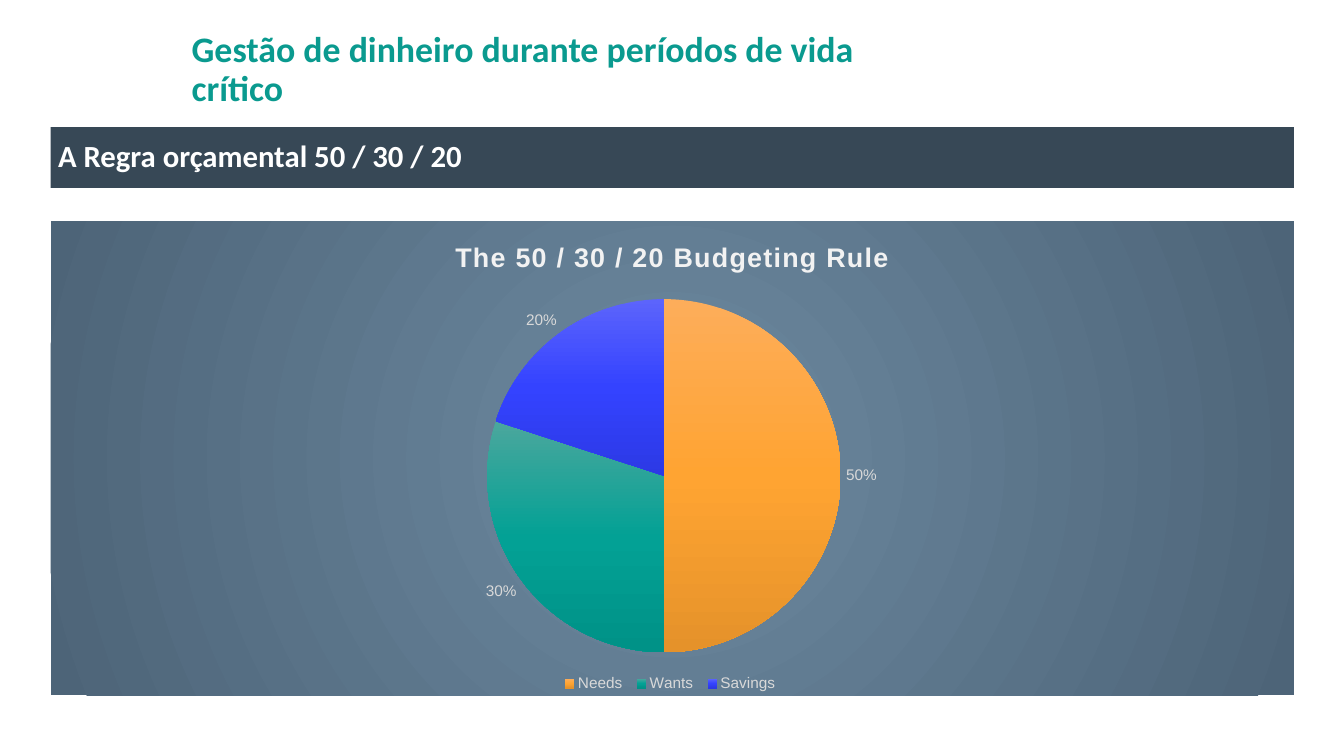
"""Build a slide about the 50 / 30 / 20 budgeting rule."""
import pptx
import pptx.chart.data
import pptx.dml.color
import pptx.enum.chart
import pptx.enum.shapes
import pptx.enum.text
import pptx.oxml
import pptx.oxml.ns
import pptx.util

Inches = pptx.util.Inches
SLICES = [
    ("Needs ", 50, ["FDAD5A", "FFA432", "E5922A"]),
    ("Wants ", 30, ["4BA79D", "03A195", "009287"]),
    ("Savings ", 20, ["5C64FC", "3443FF", "2C39E5"]),
]
LINEAR = '<a:lin ang="5400000" scaled="0"/>'
RADIAL = '<a:path path="circle"><a:fillToRect l="50000" t="50000" r="50000" b="50000"/></a:path>'


def color(value):
    return pptx.dml.color.RGBColor.from_string(value)


def format_font(font, size, fill, name, bold=False):
    font.size = pptx.util.Pt(size)
    font.name = name
    font.bold = bold
    font.color.rgb = color(fill)


def write_text(frame, text, align=None, spacing=1.0, **style):
    para = frame.paragraphs[0]
    para.alignment = align
    para.line_spacing = spacing
    span = para.add_run()
    span.text = text
    format_font(span.font, **style)
    return span


def gradient(colors, direction):
    step = 100000 // (len(colors) - 1)
    stops = "".join(
        f'<a:gs pos="{index * step}"><a:srgbClr val="{value}"/></a:gs>'
        for index, value in enumerate(colors)
    )
    return pptx.oxml.parse_xml(
        f'<a:gradFill {pptx.oxml.ns.nsdecls("a")} rotWithShape="1">'
        f"<a:gsLst>{stops}</a:gsLst>{direction}</a:gradFill>"
    )


class SlideBuilder:
    heading_font = "Calibri"
    chart_font = "Arial"
    teal, slate, white, pale, gray = "0A9A8F", "374856", "FFFFFF", "F2F2F2", "D9D9D9"

    def __init__(self, deck):
        self.page = deck.slides.add_slide(deck.slide_layouts[5])
        self.page.background.fill.solid()
        self.page.background.fill.fore_color.rgb = color(self.white)

    def set_frame(self, frame):
        frame.word_wrap = True
        frame.auto_size = pptx.enum.text.MSO_AUTO_SIZE.NONE
        frame.vertical_anchor = pptx.enum.text.MSO_ANCHOR.MIDDLE
        frame.margin_left = frame.margin_right = Inches(0.08)
        frame.margin_top = frame.margin_bottom = Inches(0.05)

    def title(self, text, left, top, width, height):
        box = self.page.shapes.title
        box.left, box.top = Inches(left), Inches(top)
        box.width, box.height = Inches(width), Inches(height)
        self.set_frame(box.text_frame)
        write_text(box.text_frame, text, pptx.enum.text.PP_ALIGN.LEFT, 0.9,
                   size=28, fill=self.teal, name=self.heading_font, bold=True)

    def banner(self, text, left, top, width, height):
        box = self.page.shapes.add_shape(
            pptx.enum.shapes.MSO_SHAPE.RECTANGLE,
            Inches(left), Inches(top), Inches(width), Inches(height))
        box.shadow.inherit = False
        box.fill.solid()
        box.fill.fore_color.rgb = color(self.slate)
        box.line.fill.background()
        self.set_frame(box.text_frame)
        write_text(box.text_frame, text, pptx.enum.text.PP_ALIGN.JUSTIFY, 0.9,
                   size=24, fill=self.white, name=self.heading_font, bold=True)

    def pie(self, heading, slices, left, top, width, height):
        data = pptx.chart.data.CategoryChartData()
        data.categories = [name for name, share, colors in slices]
        data.add_series("Series 1", [share for name, share, colors in slices])
        chart = self.page.shapes.add_chart(
            pptx.enum.chart.XL_CHART_TYPE.PIE,
            Inches(left), Inches(top), Inches(width), Inches(height), data).chart
        format_font(chart.font, 10, self.slate, self.chart_font)
        self.chart_background(chart, ["6D8AA1", "4D6478"])

        chart.has_title = True
        span = write_text(chart.chart_title.text_frame, heading, size=21,
                          fill=self.pale, name=self.chart_font, bold=True)
        span.font._element.set("spc", "100")
        chart.chart_title.include_in_layout = False

        chart.has_legend = True
        chart.legend.position = pptx.enum.chart.XL_LEGEND_POSITION.BOTTOM
        chart.legend.include_in_layout = False
        format_font(chart.legend.font, 12, self.gray, self.chart_font)

        plot = chart.plots[0]
        plot.vary_by_categories = True
        plot.has_data_labels = True
        labels = plot.data_labels
        labels.show_percentage = True
        labels.show_value = False
        labels.number_format = "0%"
        labels.number_format_is_linked = False
        labels.position = pptx.enum.chart.XL_LABEL_POSITION.OUTSIDE_END
        format_font(labels.font, 12, self.gray, self.chart_font)
        for index, (name, share, colors) in enumerate(slices):
            style = plot.series[0].points[index].format
            style.line.fill.background()
            style.fill._xPr.insert(0, gradient(colors, LINEAR))

    def chart_background(self, chart, colors):
        area = pptx.oxml.parse_xml(
            f'<c:spPr {pptx.oxml.ns.nsdecls("c", "a")}><a:ln><a:noFill/></a:ln></c:spPr>')
        area.insert(0, gradient(colors, RADIAL))
        chart._chartSpace.chart.addnext(area)


def main():
    deck = pptx.Presentation()
    deck.slide_width, deck.slide_height = pptx.util.Pt(1050), pptx.util.Pt(591)
    slide = SlideBuilder(deck)
    slide.title("Gestão de dinheiro durante períodos de vida crítico", 2, 0.37, 8.21, 0.79)
    slide.banner("A Regra orçamental 50 / 30 / 20 ", 0.55, 1.38, 13.49, 0.66)
    slide.pie("The 50 / 30 / 20 Budgeting Rule", SLICES, 0.55, 2.4, 13.49, 5.15)
    deck.save("out.pptx")


if __name__ == "__main__":
    main()
